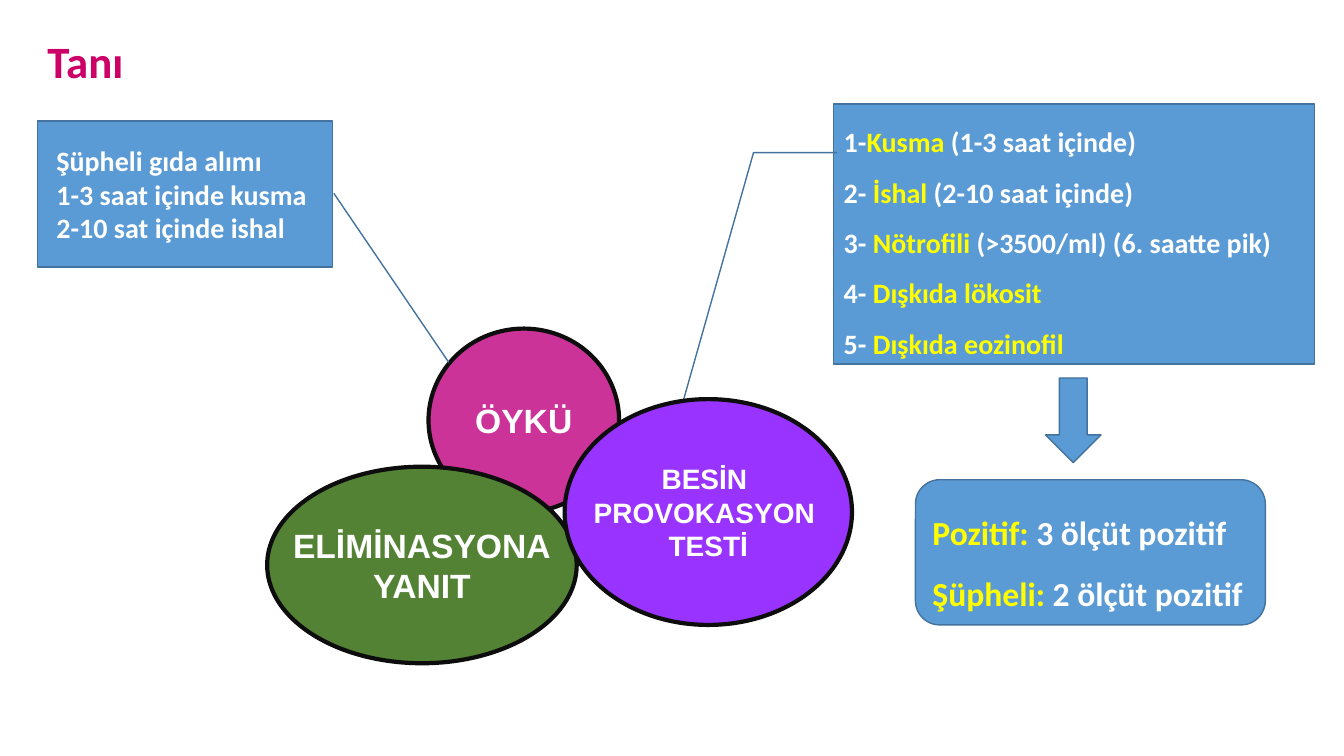
import pptx
import pptx.dml.color
import pptx.enum.shapes
import pptx.enum.text
import pptx.util

Inches, Pt = pptx.util.Inches, pptx.util.Pt
RGBColor = pptx.dml.color.RGBColor
SHAPE = pptx.enum.shapes.MSO_SHAPE
ALIGN = pptx.enum.text.PP_ALIGN
ANCHOR = pptx.enum.text.MSO_ANCHOR
AUTO_SIZE = pptx.enum.text.MSO_AUTO_SIZE

WHITE = RGBColor(0xFF, 0xFF, 0xFF)
YELLOW = RGBColor(0xFF, 0xFF, 0x00)
MAGENTA = RGBColor(0xCC, 0x00, 0x66)
PINK = RGBColor(0xCC, 0x33, 0x99)
GREEN = RGBColor(0x54, 0x82, 0x35)
PURPLE = RGBColor(0x99, 0x33, 0xFF)
BLUE = RGBColor(0x5B, 0x9B, 0xD5)
BLUE_EDGE = RGBColor(0x43, 0x73, 0x9E)
BLACK_EDGE = RGBColor(0x0D, 0x0D, 0x0D)


def set_attributes(target, values):
    for name, value in values.items():
        setattr(target, name, value)


def write_text(tf, lines, size, font="Calibri", frame=None, paragraph=None):
    """Each line is a list of (text, colour) runs."""
    set_attributes(tf, {"word_wrap": True, "auto_size": AUTO_SIZE.NONE,
                        "vertical_anchor": ANCHOR.MIDDLE, **(frame or {})})
    for i, line in enumerate(lines):
        p = tf.paragraphs[0] if i == 0 else tf.add_paragraph()
        set_attributes(p, {"alignment": ALIGN.LEFT, **(paragraph or {})})
        for text, color in line:
            r = p.add_run()
            r.text = text
            set_attributes(r.font, {"name": font, "size": Pt(size), "bold": True})
            r.font.color.rgb = color


def add_box(s, kind, box, fill=BLUE, edge=BLUE_EDGE, width=1, adjustments=()):
    sp = s.shapes.add_shape(kind, *map(Inches, box))
    sp.shadow.inherit = False
    sp.fill.solid()
    sp.fill.fore_color.rgb = fill
    sp.line.color.rgb = edge
    sp.line.width = Pt(width)
    for i, value in enumerate(adjustments):
        sp.adjustments[i] = value
    return sp


def add_title(s, box):
    title = s.shapes.title
    set_attributes(title, dict(zip(("left", "top", "width", "height"), map(Inches, box))))
    write_text(title.text_frame, [[("Tanı", MAGENTA)]], 32,
               frame={"vertical_anchor": ANCHOR.TOP},
               paragraph={"line_spacing": 1.0, "space_before": Pt(0)})


def add_criteria(s, box):
    sp = add_box(s, SHAPE.LINE_CALLOUT_2, box,
                 adjustments=(0.188, 0.007, 0.188, -0.167, 1.266, -0.332))
    criteria = [
        ("1-", "Kusma", " (1-3 saat içinde)"),
        ("2- ", "İshal", " (2-10 saat içinde)"),
        ("3- ", "Nötrofili", " (>3500/ml) (6. saatte pik)"),
        ("4- ", "Dışkıda lökosit"),
        ("5- ", "Dışkıda eozinofil"),
    ]
    lines = [list(zip(parts, (WHITE, YELLOW, WHITE))) for parts in criteria]
    write_text(sp.text_frame, lines, 20, paragraph={"line_spacing": 1.5})


def add_history(s, box):
    sp = add_box(s, SHAPE.LINE_CALLOUT_1, box, adjustments=(0.495, 1.004, 1.652, 1.393))
    lines = ["Şüpheli gıda alımı", "1-3 saat içinde kusma", "2-10 sat içinde ishal"]
    # The default inset plus a small indent
    write_text(sp.text_frame, [[(line, WHITE)] for line in lines], 20,
               frame={"margin_left": Inches(0.19)})


def add_ellipse(s, box, fill, lines, size):
    sp = add_box(s, SHAPE.OVAL, box, fill, BLACK_EDGE, 3)
    write_text(sp.text_frame, [[(line, WHITE)] for line in lines], size, "Arial",
               {"word_wrap": False}, {"alignment": ALIGN.CENTER})


def add_result(s, box):
    x, y, w, h = box
    arrow_w, arrow_h = 0.55, 0.84
    add_box(s, SHAPE.DOWN_ARROW, (x + 1.29, y, arrow_w, arrow_h))
    top = y + arrow_h + 0.17
    sp = add_box(s, SHAPE.ROUNDED_RECTANGLE, (x, top, w, y + h - top))
    results = [("Pozitif: ", "3 ölçüt pozitif"), ("Şüpheli: ", "2 ölçüt pozitif")]
    lines = [[(label, YELLOW), (text, WHITE)] for label, text in results]
    write_text(sp.text_frame, lines, 24, paragraph={"line_spacing": 1.5})


def main():
    prs = pptx.Presentation()
    prs.slide_width, prs.slide_height = Inches(13.33), Inches(7.5)
    s = prs.slides.add_slide(prs.slide_layouts[5])

    # Title and criteria callout
    add_title(s, (0.37, 0.28, 4.81, 0.73))
    add_criteria(s, (8.27, 1.03, 4.77, 2.58))

    # Overlapping pillars of the diagnosis
    pillars = [
        ((4.25, 3.26, 1.89, 1.82), PINK, ["ÖYKÜ"], 24),
        ((2.65, 4.63, 3.07, 1.95), GREEN, ["ELİMİNASYONA", "YANIT"], 24),
        ((5.6, 3.96, 2.85, 2.24), PURPLE, ["BESİN ", "PROVOKASYON ", "TESTİ"], 20),
    ]
    for pillar in pillars:
        add_ellipse(s, *pillar)

    # History callout, then the arrow and its result
    add_history(s, (0.37, 1.2, 2.93, 1.45))
    add_result(s, (9.08, 3.75, 3.47, 2.45))

    prs.save("out.pptx")


if __name__ == "__main__":
    main()
